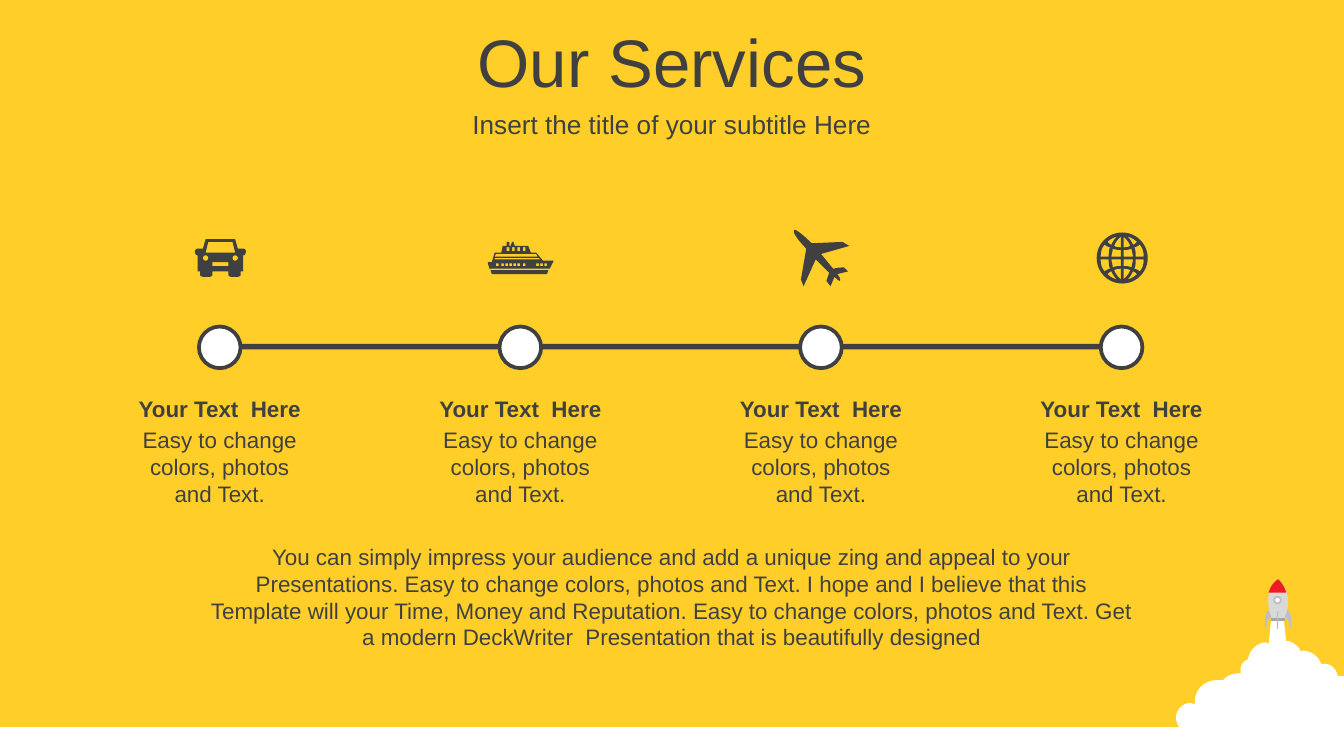
import math
from dataclasses import dataclass

import pptx
import pptx.dml.color
import pptx.enum.shapes
import pptx.enum.text
import pptx.shapes.autoshape
import pptx.slide
import pptx.util

Inches = pptx.util.Inches
Color = pptx.dml.color.RGBColor
ShapeKind = pptx.enum.shapes.MSO_SHAPE
Anchor = pptx.enum.text.MSO_ANCHOR
Contour = list[tuple[float, ...]]

YELLOW = Color(0xFF, 0xCE, 0x29)
DARK = Color(0x40, 0x40, 0x40)
WHITE = Color(0xFF, 0xFF, 0xFF)
RED = Color(0xED, 0x1C, 0x24)
LIGHT_GRAY = Color(0xD9, 0xD9, 0xD9)
MID_GRAY = Color(0xBF, 0xBF, 0xBF)
DARK_GRAY = Color(0xA6, 0xA6, 0xA6)

CURVE_STEPS = 8
FIRST_NODE, LAST_NODE, NODE_SIZE = 1.48, 8.19, 0.31
COLUMN_WIDTH = 1.45


@dataclass(frozen=True)
class Service:
    heading: str
    description: str
    icon: list[Contour]


def box(left: float, top: float, right: float, bottom: float) -> Contour:
    return [(left, top), (right, top), (right, bottom), (left, bottom)]


def circle(x: float, y: float, radius: float, count: int = 48) -> Contour:
    angles = [2 * math.pi * i / count for i in range(count)]
    return [(x + radius * math.cos(a), y + radius * math.sin(a)) for a in angles]


def place(contour: Contour, x: float, y: float, flip_x: int, flip_y: int) -> Contour:
    return [tuple(x + flip_x * v if i % 2 == 0 else y + flip_y * v
                  for i, v in enumerate(step)) for step in contour]


def trace(contour: Contour) -> Contour:
    points = [contour[0]]
    for step in contour[1:]:
        if len(step) == 2:
            points.append(step)
            continue
        corners = (points[-1], step[:2], step[2:4], step[4:])
        for i in range(1, CURVE_STEPS + 1):
            t = i / CURVE_STEPS
            weights = ((1 - t) ** 3, 3 * t * (1 - t) ** 2, 3 * t * t * (1 - t), t ** 3)
            points.append(tuple(sum(w * c[axis] for w, c in zip(weights, corners))
                                for axis in (0, 1)))
    return points


def paint(shape: pptx.shapes.autoshape.Shape, fill: Color,
          line: Color | None = None, line_width: float = 1) -> None:
    shape.shadow.inherit = False
    shape.fill.solid()
    shape.fill.fore_color.rgb = fill
    if line is None:
        shape.line.fill.background()
    else:
        shape.line.color.rgb = line
        shape.line.width = pptx.util.Pt(line_width)


def add_outline(slide: pptx.slide.Slide, contours: list[Contour], fill: Color) -> None:
    traced = [[(Inches(x), Inches(y)) for x, y in trace(contour)] for contour in contours]
    builder = slide.shapes.build_freeform(*traced[0][0])
    for points in traced:
        if points is not traced[0]:
            builder.move_to(*points[0])
        builder.add_line_segments(points[1:], close=True)
    paint(builder.convert_to_shape(), fill)


def add_preset(slide: pptx.slide.Slide, kind: ShapeKind, left: float, top: float,
               width: float, height: float, fill: Color,
               line: Color | None = None, line_width: float = 1) -> None:
    bounds = [Inches(length) for length in (left, top, width, height)]
    paint(slide.shapes.add_shape(kind, *bounds), fill, line, line_width)


def add_text(slide: pptx.slide.Slide, text: str, *, left: float, top: float,
             width: float, height: float, size: float = 12, bold: bool = False,
             anchor: Anchor = Anchor.TOP, space_before: float = 0) -> None:
    bounds = [Inches(length) for length in (left, top, width, height)]
    frame = slide.shapes.add_textbox(*bounds).text_frame
    frame.word_wrap = True
    frame.vertical_anchor = anchor
    paragraph = frame.paragraphs[0]
    paragraph.alignment = pptx.enum.text.PP_ALIGN.CENTER
    paragraph.space_before = pptx.util.Pt(space_before)
    run = paragraph.add_run()
    run.text = text
    run.font.name, run.font.size, run.font.bold = "Arial", pptx.util.Pt(size), bold
    run.font.color.rgb = DARK


def car_icon() -> list[Contour]:
    half = trace([(0, 1.78), (0.11, 1.78), (0.13, 1.85), (0.17, 1.85),
                  (0.18, 1.85, 0.19, 1.86, 0.19, 1.87), (0.19, 1.89, 0.18, 1.9, 0.17, 1.9),
                  (0.17, 2.02), (0.15, 2.02), (0.15, 2.05),
                  (0.15, 2.05, 0.14, 2.06, 0.13, 2.06), (0.08, 2.06),
                  (0.07, 2.06, 0.06, 2.05, 0.06, 2.05), (0.06, 2.02), (0, 2.02)])
    body = place(half, 1.64, 0, 1, 1) + place(half, 1.64, 0, -1, 1)[::-1]
    windscreen = [(1.55, 1.8), (1.73, 1.8), (1.75, 1.88), (1.53, 1.88)]
    return [body, windscreen, box(1.58, 1.95, 1.7, 1.98),
            circle(1.75, 1.92, 0.02), circle(1.53, 1.92, 0.02)]


def ship_icon() -> list[Contour]:
    hull = [(3.65, 2.01), (4.08, 2.01), (4.07, 2.04), (3.66, 2.04)]
    decks = [(3.81, 1.8), (3.82, 1.8), (3.83, 1.83), (3.93, 1.83), (3.95, 1.88),
             (3.99, 1.88), (4.04, 1.94), (4.12, 1.94), (4.11, 1.96, 4.1, 1.98, 4.09, 2),
             (3.64, 2), (3.64, 1.98, 3.63, 1.97, 3.63, 1.95), (3.66, 1.95), (3.68, 1.88),
             (3.73, 1.88), (3.74, 1.83), (3.77, 1.83), (3.77, 1.8), (3.79, 1.8),
             (3.79, 1.83), (3.8, 1.83)]
    stripes = [[(3.68, 1.92), (4.01, 1.92), (4.02, 1.93), (3.68, 1.93)],
               [(3.69, 1.89), (3.99, 1.89), (4, 1.91), (3.68, 1.91)]]
    portholes = [box(x, 1.96, x + 0.02, 1.98)
                 for x in (3.69, 3.73, 3.76, 3.79, 3.82, 3.85, 3.89, 3.99, 4.02, 4.05)]
    windows = [box(x, 1.84, x + 0.02, 1.87) for x in (3.77, 3.81, 3.85, 3.89)]
    return [hull, decks, *stripes, *portholes, *windows]


def plane_icon() -> list[Contour]:
    return [[(6.31, 2.02), (6.23, 2.04), (6.24, 2.05, 6.26, 2.08, 6.25, 2.09),
             (6.24, 2.09, 6.22, 2.07, 6.21, 2.06), (6.18, 2.13), (6.15, 2.09),
             (6.17, 2.03), (6.07, 1.93), (5.98, 2.13), (5.96, 2.08), (6, 1.85),
             (5.96, 1.81, 5.89, 1.73, 5.91, 1.71), (5.92, 1.7, 6, 1.77, 6.04, 1.81),
             (6.27, 1.8), (6.32, 1.83), (6.11, 1.89), (6.2, 2),
             (6.23, 1.99, 6.28, 1.99, 6.28, 1.99)]]


def globe_icon() -> list[Contour]:
    quarter = [
        [(0.08, 0.1), (0.07, 0.12, 0.06, 0.14, 0.04, 0.16),
         (0.07, 0.15, 0.09, 0.14, 0.11, 0.12), (0.1, 0.11, 0.09, 0.1, 0.08, 0.1)],
        [(0.01, 0.08), (0.01, 0.16), (0.03, 0.14, 0.05, 0.12, 0.06, 0.09),
         (0.04, 0.08, 0.03, 0.08, 0.01, 0.08)],
        [(0.1, 0.01), (0.1, 0.04, 0.1, 0.06, 0.09, 0.08),
         (0.1, 0.08, 0.12, 0.09, 0.13, 0.1), (0.15, 0.08, 0.16, 0.05, 0.16, 0.01)],
        [(0.01, 0.01), (0.01, 0.06), (0.03, 0.06, 0.05, 0.06, 0.07, 0.07),
         (0.07, 0.05, 0.08, 0.03, 0.08, 0.01)]]
    x, y = 8.35, 1.92
    return [circle(x, y, 0.19)] + [place(gap, x, y, flip_x, flip_y) for gap in quarter
                                   for flip_x in (1, -1) for flip_y in (1, -1)]


def add_rocket(slide: pptx.slide.Slide) -> None:
    smoke = [(9.46, 4.59), (9.55, 4.59), (9.57, 4.77), (9.59, 4.77),
             (9.62, 4.78, 9.65, 4.8, 9.67, 4.83), (9.68, 4.85), (9.69, 4.84),
             (9.75, 4.84, 9.81, 4.88, 9.83, 4.94), (9.86, 4.94),
             (9.9, 4.94, 9.94, 4.97, 9.95, 5.02), (9.95, 5.03), (10, 5.03), (10, 5.6),
             (9.34, 5.61), (8.93, 5.45), (8.86, 5.45), (8.8, 5.45, 8.75, 5.4, 8.75, 5.34),
             (8.75, 5.28, 8.8, 5.23, 8.86, 5.23), (8.89, 5.24), (8.89, 5.22),
             (8.89, 5.13, 8.96, 5.06, 9.06, 5.06), (9.1, 5.06), (9.11, 5.05),
             (9.14, 5.02, 9.18, 5.01, 9.23, 5.01), (9.23, 4.98),
             (9.23, 4.95, 9.25, 4.92, 9.28, 4.91), (9.29, 4.89),
             (9.3, 4.83, 9.36, 4.78, 9.42, 4.78), (9.44, 4.79)]
    body = [(9.46, 4.62), (9.44, 4.53, 9.4, 4.4, 9.51, 4.31),
            (9.62, 4.41, 9.58, 4.54, 9.56, 4.62)]
    nose = [(9.51, 4.31), (9.54, 4.34, 9.56, 4.37, 9.57, 4.41), (9.44, 4.41),
            (9.45, 4.37, 9.47, 4.34, 9.51, 4.31)]
    fin = [(0.07, 4.54), (0.05, 4.59), (0.09, 4.61, 0.08, 4.66, 0.09, 4.68),
           (0.1, 4.65, 0.11, 4.57, 0.07, 4.54)]
    add_outline(slide, [smoke], WHITE)
    add_outline(slide, [body], LIGHT_GRAY)
    add_outline(slide, [box(9.46, 4.6, 9.56, 4.62)], DARK_GRAY)
    add_outline(slide, [nose], RED)
    add_preset(slide, ShapeKind.OVAL, 9.48, 4.44, 0.05, 0.05, WHITE, MID_GRAY)
    add_preset(slide, ShapeKind.RECTANGLE, 9.5, 4.55, 0.01, 0.13, MID_GRAY)
    for side in (-1, 1):
        add_outline(slide, [place(fin, 9.51, 0, side, 1)], MID_GRAY)


def add_service(slide: pptx.slide.Slide, service: Service, node_left: float) -> None:
    add_outline(slide, service.icon, DARK)
    add_preset(slide, ShapeKind.OVAL, node_left, 2.43, NODE_SIZE, NODE_SIZE, WHITE, DARK, 2)
    left = node_left + (NODE_SIZE - COLUMN_WIDTH) / 2
    add_text(slide, service.description, left=left, top=3.12, width=COLUMN_WIDTH, height=0.71)
    add_text(slide, service.heading, left=left, top=2.89, width=COLUMN_WIDTH, height=0.3, bold=True)


def main() -> None:
    presentation = pptx.Presentation()
    presentation.slide_width, presentation.slide_height = Inches(10), Inches(45 / 8)
    slide = presentation.slides.add_slide(presentation.slide_layouts[6])
    slide.background.fill.solid()
    slide.background.fill.fore_color.rgb = YELLOW
    add_preset(slide, ShapeKind.RECTANGLE, 0, 5.41, 10, 0.24, WHITE)
    add_rocket(slide)
    add_preset(slide, ShapeKind.RECTANGLE, 1.64, 2.56, 6.71, 0.04, DARK)
    add_text(slide, "Our Services", left=0, top=0.14, width=10, height=0.63, size=36,
             anchor=Anchor.MIDDLE, space_before=7.2)
    add_text(slide, "Insert the title of your subtitle Here", left=0, top=0.77, width=10,
             height=0.31, size=14, anchor=Anchor.MIDDLE, space_before=2.8)
    icons = [car_icon(), ship_icon(), plane_icon(), globe_icon()]
    step = (LAST_NODE - FIRST_NODE) / (len(icons) - 1)
    for i, icon in enumerate(icons):
        service = Service("Your Text  Here", "Easy to change colors, photos and Text.", icon)
        add_service(slide, service, FIRST_NODE + i * step)
    add_text(slide, "You can simply impress your audience and add a unique zing and appeal to "
             "your Presentations. Easy to change colors, photos and Text. I hope and I believe "
             "that this Template will your Time, Money and Reputation. Easy to change colors, "
             "photos and Text. Get a modern DeckWriter  Presentation that is beautifully "
             "designed", left=1.46, top=3.99, width=7.08, height=0.91)
    presentation.save("out.pptx")


if __name__ == "__main__":
    main()
